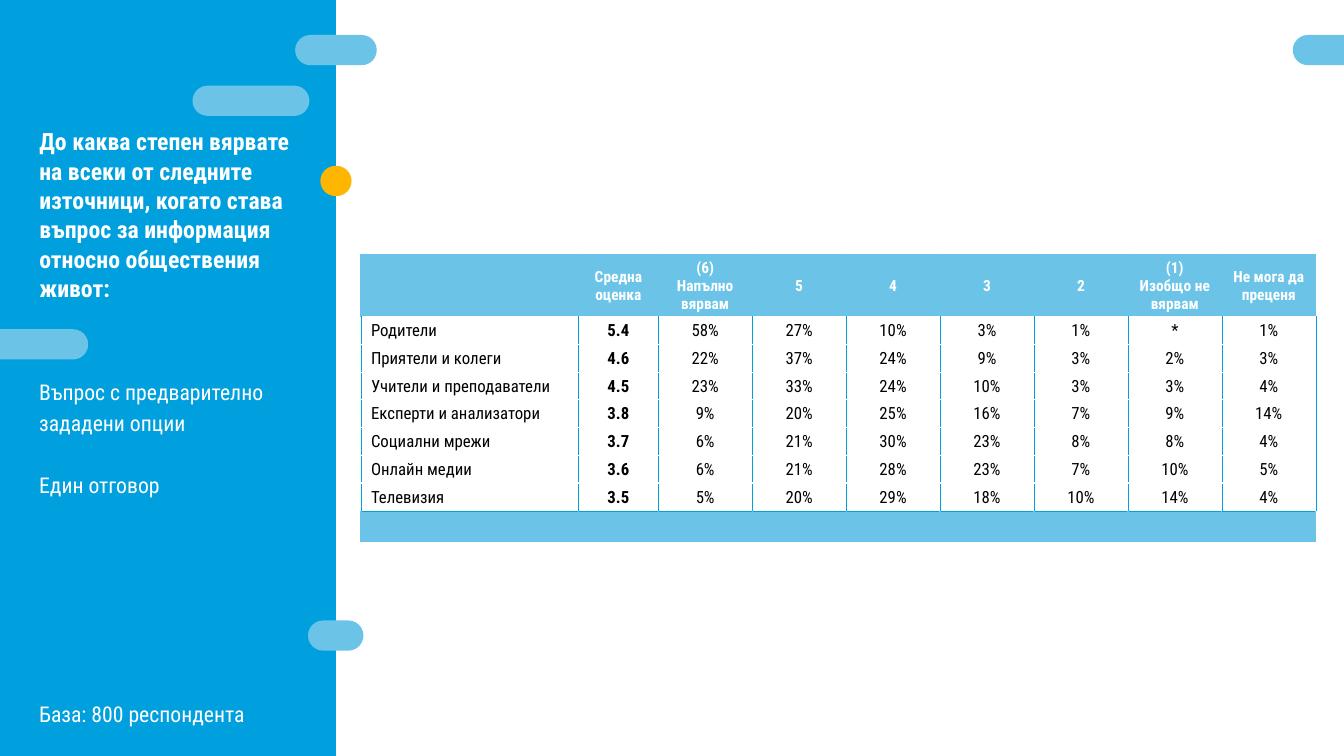
from dataclasses import dataclass
from typing import Any

from lxml import etree
from pptx import Presentation
from pptx.dml.color import RGBColor
from pptx.enum.shapes import MSO_SHAPE
from pptx.enum.text import MSO_ANCHOR, MSO_AUTO_SIZE, PP_ALIGN
from pptx.oxml.ns import qn
from pptx.util import Pt

RECT, PILL = MSO_SHAPE.RECTANGLE, MSO_SHAPE.ROUNDED_RECTANGLE
TOP, MIDDLE = MSO_ANCHOR.TOP, MSO_ANCHOR.MIDDLE
LEFT, CENTER = PP_ALIGN.LEFT, PP_ALIGN.CENTER
NO_AUTOFIT = MSO_AUTO_SIZE.NONE

FONT = "Roboto Condensed"
COLORS = {"blue": "00A0DF", "sky": "6BC4E8", "amber": "FFB600",
          "white": "FFFFFF", "black": "000000"}
PILL_HEIGHT = 21.6


@dataclass(frozen=True)
class Block:
    left: float
    top: float
    width: float
    height: float
    color: str = "sky"
    kind: Any = PILL


@dataclass(frozen=True)
class Label:
    text: str
    top: float
    height: float
    width: float = 208.8
    size: float = 15.5
    bold: bool = False
    spacing: float | None = None


@dataclass(frozen=True)
class RowStyle:
    height: float
    size: float
    color: str
    fill: str | None
    borders: dict[str, tuple[str, float]]


BLOCKS = [
    Block(0, 0, 240, 540, "blue", RECT),
    Block(210.8, 25, 58.3, PILL_HEIGHT),
    Block(137.5, 61.2, 83.5, PILL_HEIGHT),
    Block(228.8, 118.5, 22.3, PILL_HEIGHT, "amber"),
    Block(-63, 235.2, 126, PILL_HEIGHT),
    Block(220, 443.2, 39.6, PILL_HEIGHT),
    Block(923.4, 25, 58.3, PILL_HEIGHT),
]

LABEL_LEFT = 20.9
TITLE = Label("До каква степен вярвате на всеки от следните източници, когато "
              "става въпрос за информация относно обществения живот:",
              86.4, 133.2, 205.2, 17, True, 21)
LABELS = [
    Label("Въпрос с предварително зададени опции", 263.5, 55.4, spacing=22),
    Label("Един отговор", 329.8, 29.5, spacing=22),
    Label("База: 800 респондента", 496.8, 25.9),
]

HEADER = ["", "Средна оценка", "(6)\nНапълно вярвам", "5", "4", "3", "2",
          "(1)\nИзобщо не вярвам", "Не мога да преценя"]
RATINGS = [
    ["Родители", "5.4", "58%", "27%", "10%", "3%", "1%", "*", "1%"],
    ["Приятели и колеги", "4.6", "22%", "37%", "24%", "9%", "3%", "2%", "3%"],
    ["Учители и преподаватели", "4.5", "23%", "33%", "24%", "10%", "3%", "3%", "4%"],
    ["Експерти и анализатори", "3.8", "9%", "20%", "25%", "16%", "7%", "9%", "14%"],
    ["Социални мрежи", "3.7", "6%", "21%", "30%", "23%", "8%", "8%", "4%"],
    ["Онлайн медии", "3.6", "6%", "21%", "28%", "23%", "7%", "10%", "5%"],
    ["Телевизия", "3.5", "5%", "20%", "29%", "18%", "10%", "14%", "4%"],
]
COL_WIDTHS = [155.5, 56.9] + [67.1] * 7
SKY_LINE, BLUE_LINE = ("sky", 1), ("blue", 0.25)
HEADER_STYLE = RowStyle(44.7, 11, "white", "sky", dict.fromkeys("LRTB", SKY_LINE))
BODY_STYLE = RowStyle(19.8, 12, "black", None, dict.fromkeys("LRB", BLUE_LINE))
FOOTER_STYLE = RowStyle(21.8, 11, "white", "sky",
                        {"L": SKY_LINE, "R": SKY_LINE, "T": BLUE_LINE, "B": SKY_LINE})


def rgb(name: str) -> RGBColor:
    return RGBColor.from_string(COLORS[name])


def set_all(target: Any, values: dict[str, Any]) -> None:
    for name, value in values.items():
        setattr(target, name, value)


def write(p: Any, text: str, size: float, color: str, bold: bool) -> None:
    r = p.add_run()
    r.text = text
    set_all(r.font, {"name": FONT, "size": Pt(size), "bold": bold})
    r.font.color.rgb = rgb(color)


def add_block(slide: Any, block: Block) -> None:
    sp = slide.shapes.add_shape(block.kind, Pt(block.left), Pt(block.top),
                                Pt(block.width), Pt(block.height))
    sp.shadow.inherit = False
    sp.fill.solid()
    sp.fill.fore_color.rgb = rgb(block.color)
    sp.line.fill.background()
    if block.kind == PILL:
        sp.adjustments[0] = 0.5


def fill_label(sp: Any, label: Label) -> None:
    set_all(sp, {"left": Pt(LABEL_LEFT), "top": Pt(label.top),
                 "width": Pt(label.width), "height": Pt(label.height)})
    tf = sp.text_frame
    set_all(tf, {"word_wrap": True, "auto_size": NO_AUTOFIT, "vertical_anchor": TOP})
    p = tf.paragraphs[0]
    p.alignment = LEFT
    if label.spacing:
        p.line_spacing = Pt(label.spacing)
    write(p, label.text, label.size, "white", label.bold)


def set_borders(cell: Any, borders: dict[str, tuple[str, float]]) -> None:
    tc_pr = cell._tc.get_or_add_tcPr()
    for i, (side, (color, width)) in enumerate(borders.items()):
        ln = etree.Element(qn(f"a:ln{side}"), w=str(Pt(width)))
        solid = etree.SubElement(ln, qn("a:solidFill"))
        etree.SubElement(solid, qn("a:srgbClr"), val=COLORS[color])
        tc_pr.insert(i, ln)


def fill_cell(cell: Any, text: str, col: int, style: RowStyle) -> None:
    is_source = col == 0
    set_all(cell, {"margin_left": Pt(7.2 if is_source else 0.7), "margin_top": Pt(0.7),
                   "margin_right": Pt(0.7), "margin_bottom": 0,
                   "vertical_anchor": MIDDLE})
    if style.fill:
        cell.fill.solid()
        cell.fill.fore_color.rgb = rgb(style.fill)
    else:
        cell.fill.background()
    set_borders(cell, style.borders)
    tf = cell.text_frame
    for i, line in enumerate(text.split("\n")):
        p = tf.add_paragraph() if i else tf.paragraphs[0]
        p.alignment = LEFT if is_source else CENTER
        if line:
            write(p, line, style.size, style.color, style is HEADER_STYLE or col == 1)
        else:
            etree.SubElement(p._p, qn("a:endParaRPr"), sz=str(style.size * 100))


def add_ratings(slide: Any) -> None:
    rows = [(HEADER, HEADER_STYLE), *((row, BODY_STYLE) for row in RATINGS),
            ([""] * len(HEADER), FOOTER_STYLE)]
    height = sum(style.height for _, style in rows)
    table = slide.shapes.add_table(len(rows), len(HEADER), Pt(257.8), Pt(181.6),
                                   Pt(sum(COL_WIDTHS)), Pt(height)).table
    set_all(table, {"first_row": False, "horz_banding": False})
    for column, width in zip(table.columns, COL_WIDTHS):
        column.width = Pt(width)
    for r, (texts, style) in enumerate(rows):
        table.rows[r].height = Pt(style.height)
        for c, text in enumerate(texts):
            fill_cell(table.cell(r, c), text, c, style)


def main() -> None:
    prs = Presentation()
    set_all(prs, {"slide_width": Pt(960), "slide_height": Pt(540)})
    slide = prs.slides.add_slide(prs.slide_layouts.get_by_name("Title Only"))
    for block in BLOCKS:
        add_block(slide, block)
    add_ratings(slide)
    title = slide.shapes.title
    fill_label(title, TITLE)
    title.element.getparent().append(title.element)
    for label in LABELS:
        fill_label(slide.shapes.add_textbox(0, 0, 0, 0), label)
    prs.save("out.pptx")


if __name__ == "__main__":
    main()
